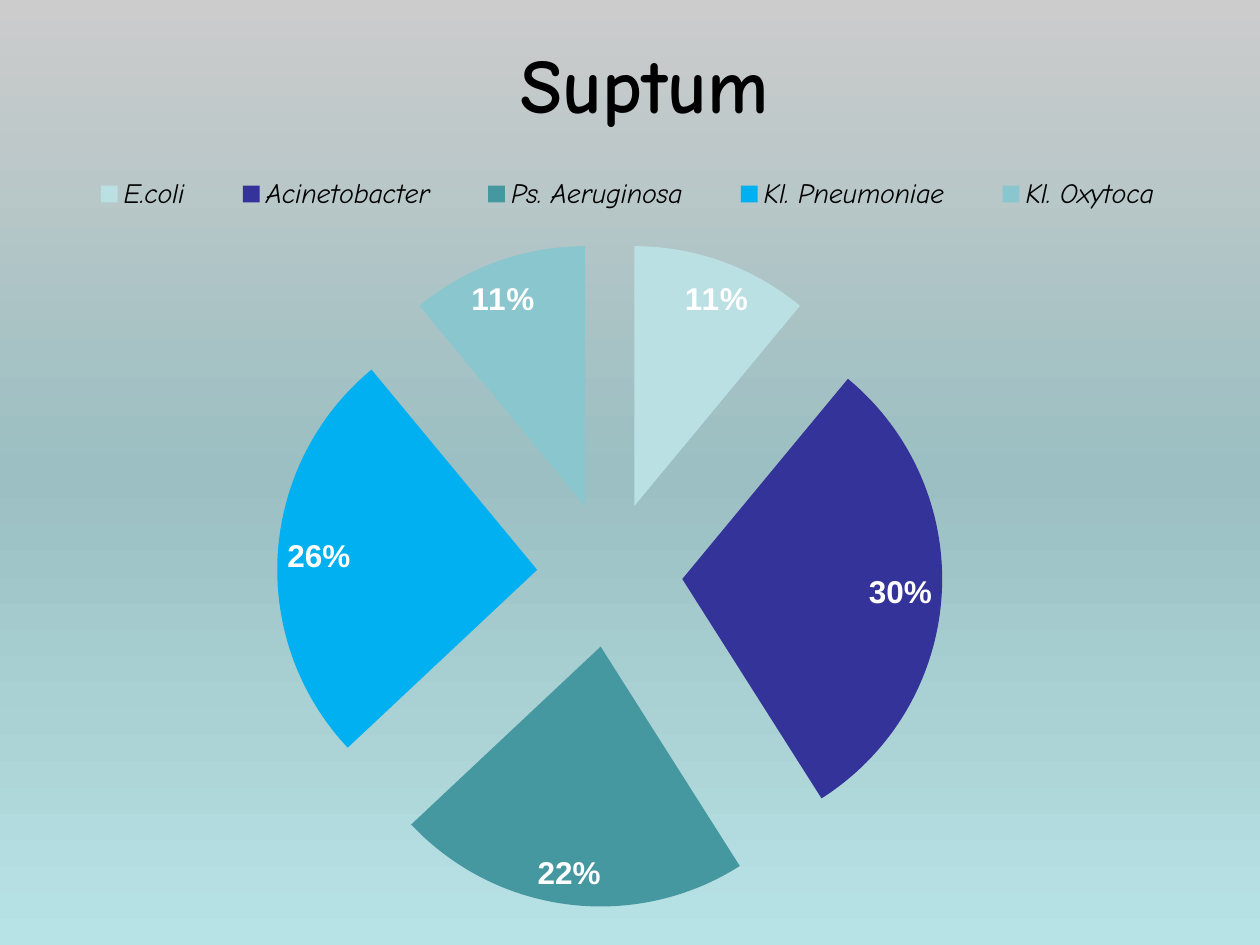
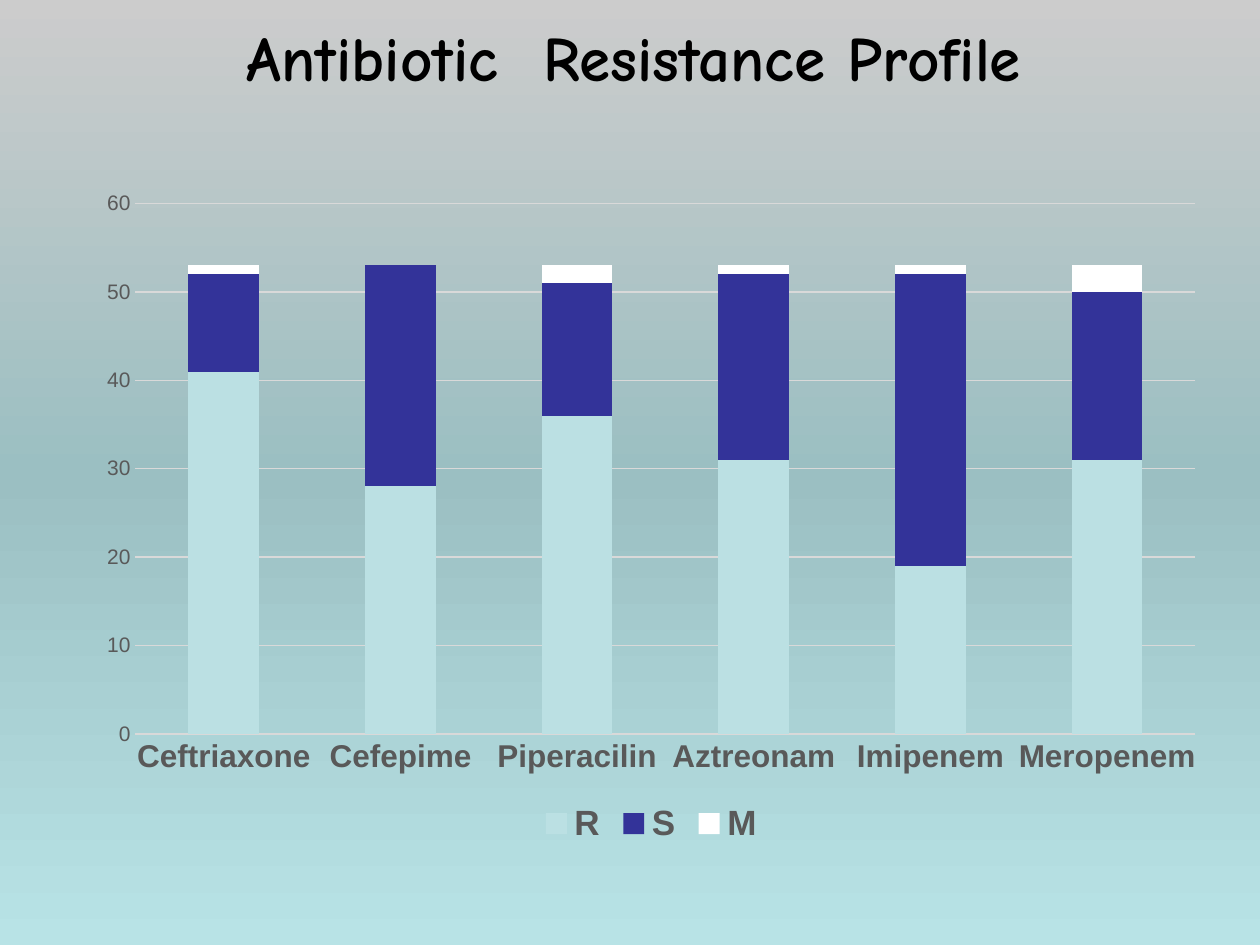
from copy import deepcopy

from lxml import etree
from pptx import Presentation
from pptx import util as u
from pptx.chart import data
from pptx.dml.color import RGBColor
from pptx.enum import chart as ch
from pptx.enum import text
from pptx.oxml import ns

PX = 9144  # 100 px to the inch
HEX = {
    "top": "CCCCCC", "mid": "9BBFC2", "low": "B8E3E6",
    "black": "000000", "white": "FFFFFF", "gray": "595959", "rule": "D9D9D9",
    "pale": "BBE0E3", "navy": "333399", "teal": "4597A0",
    "sky": "00B0F0", "aqua": "8AC6CD",
}
HEAD, BODY = "Comic Neue", "Arial"


def rgb(name):
    return RGBColor.from_string(HEX[name])


def node(tag, val):
    item = etree.Element(ns.qn(tag))
    item.set("val", str(val))
    return item


def layout(box, area, inner=False):
    """Place a chart part: box in px within the chart area."""
    lay = etree.Element(ns.qn("c:layout"))
    hand = etree.SubElement(lay, ns.qn("c:manualLayout"))
    if inner:
        hand.append(node("c:layoutTarget", "inner"))
    for key in "xy":
        hand.append(node(f"c:{key}Mode", "edge"))
    for key, val, full in zip("xywh", box, area[2:] * 2):
        hand.append(node(f"c:{key}", val / full))
    return lay


class Deck:
    def __init__(self):
        self.prs = Presentation()
        self.prs.slide_width, self.prs.slide_height = 1000 * PX, 750 * PX
        self.slide = None

    def page(self):
        """Start a slide on the shared three-stop gradient."""
        self.slide = self.prs.slides.add_slide(self.prs.slide_layouts[6])
        fill = self.slide.background.fill
        fill.gradient()
        fill.gradient_angle = 270
        stops = self.slide.element.xpath(".//a:gsLst")[0]
        stops.append(deepcopy(stops[-1]))
        for stop, name, pos in zip(fill.gradient_stops, ("top", "mid", "low"), (0, 0.5, 1)):
            stop.color.rgb = rgb(name)
            stop.position = pos

    def font(self, font, size, color="black", bold=False, face=BODY, slant=False):
        font.size, font.name = u.Pt(size), face
        font.bold, font.italic = bold, slant
        font.color.rgb = rgb(color)

    def title(self, words, high, size):
        box = self.slide.shapes.add_textbox(66 * PX, 16 * PX, 892 * PX, high * PX)
        frame = box.text_frame
        frame.word_wrap = True
        frame.vertical_anchor = text.MSO_ANCHOR.MIDDLE
        frame.text = words
        para = frame.paragraphs[0]
        para.alignment = text.PP_ALIGN.CENTER
        self.font(para.runs[0].font, size, bold=True, face=HEAD)

    def chart(self, kind, area, cats, rows, size):
        table = data.CategoryChartData()
        table.categories = cats
        for name, vals in rows:
            table.add_series(name, vals)
        spot = [n * PX for n in area]
        chart = self.slide.shapes.add_chart(kind, *spot, table).chart
        chart.has_title = False
        self.font(chart.font, size)
        return chart

    def legend(self, chart, side, size, **style):
        chart.has_legend = True
        chart.legend.position = side
        chart.legend.include_in_layout = False
        self.font(chart.legend.font, size, **style)

    def paint(self, part, color):
        part.format.fill.solid()
        part.format.fill.fore_color.rgb = rgb(color)

    def rule(self, line):
        line.color.rgb = rgb("rule")
        line.width = u.Pt(0.75)

    def place(self, chart, area, plot, key):
        """Fix the plot area and the legend of a chart."""
        root = chart.element
        for old in root.xpath(".//c:plotArea/c:layout | .//c:legend/c:layout"):
            old.getparent().remove(old)
        root.xpath(".//c:plotArea")[0].insert(0, layout(plot, area, True))
        root.xpath(".//c:legendPos")[0].addnext(layout(key, area))

    def pie(self, area, cats, vals, colors, burst, plot, key):
        chart = self.chart(ch.XL_CHART_TYPE.PIE, area, cats, [("Series 1", vals)], 18)
        self.legend(chart, ch.XL_LEGEND_POSITION.TOP, 16, face=HEAD, slant=True)
        self.place(chart, area, plot, key)
        pie = chart.plots[0]
        pie.vary_by_categories = True
        for i, color in enumerate(colors):
            self.paint(pie.series[0].points[i], color)
        # Explode the series and each slice
        for mark in chart.element.xpath(".//c:dPt[1] | .//c:dPt/c:spPr"):
            mark.addprevious(node("c:explosion", burst))
        pie.has_data_labels = True
        labels = pie.data_labels
        labels.show_percentage, labels.show_value = True, False
        labels.number_format, labels.number_format_is_linked = "0%", False
        labels.position = ch.XL_LABEL_POSITION.BEST_FIT
        self.font(labels.font, 18, "white", True)

    def stack(self, area, cats, rows, colors):
        chart = self.chart(ch.XL_CHART_TYPE.COLUMN_STACKED, area, cats, rows, 10)
        self.legend(chart, ch.XL_LEGEND_POSITION.BOTTOM, 20, color="gray", bold=True)
        plot = chart.plots[0]
        plot.vary_by_categories = False
        plot.gap_width, plot.overlap = 150, 100
        for row, color in zip(plot.series, colors):
            self.paint(row, color)
        # Axes
        base, side = chart.category_axis, chart.value_axis
        for axis, size, bold in ((base, 18, True), (side, 12, False)):
            axis.major_tick_mark = axis.minor_tick_mark = ch.XL_TICK_MARK.NONE
            self.font(axis.tick_labels.font, size, "gray", bold)
        self.rule(base.format.line)
        side.format.line.fill.background()
        side.minimum_scale, side.maximum_scale, side.major_unit = 0, 60, 10
        side.has_major_gridlines = True
        self.rule(side.major_gridlines.format.line)


def main():
    deck = Deck()

    # Shares of bacteria
    deck.page()
    deck.title("Suptum", 100, 44)
    deck.pie(
        (33, 100, 933, 625),
        ["E.coli", "Acinetobacter", "Ps. Aeruginosa", "Kl. Pneumoniae", "Kl. Oxytoca"],
        [11, 30, 22, 26, 11],
        ["pale", "navy", "teal", "sky", "aqua"],
        burst=28,
        plot=(1, 92, 900, 528),
        key=(8, 26, 914, 56),
    )

    # Resistance by drug
    deck.page()
    deck.title("Antibiotic  Resistance Profile ", 58, 36)
    deck.stack(
        (67, 142, 900, 533),
        ["Ceftriaxone", "Cefepime", "Piperacilin", "Aztreonam", "Imipenem", "Meropenem"],
        [
            ("R", [41, 28, 36, 31, 19, 31]),
            ("S", [11, 25, 15, 21, 33, 19]),
            ("M", [1, 0, 2, 1, 1, 3]),
        ],
        ["pale", "navy", "white"],
    )

    deck.prs.save("out.pptx")


if __name__ == "__main__":
    main()
